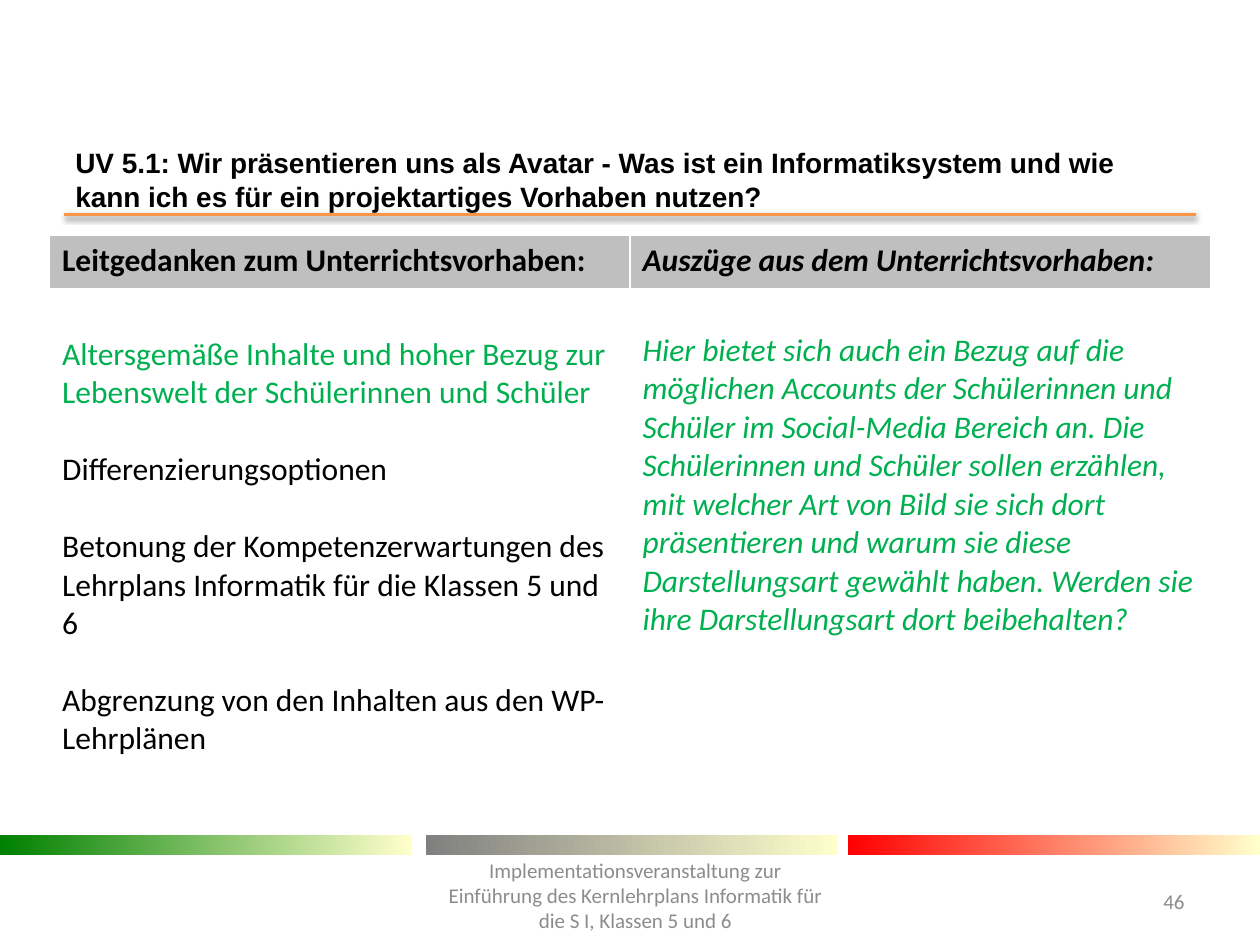
from dataclasses import dataclass

from lxml import etree
from pptx import Presentation
from pptx.dml.color import RGBColor
from pptx.enum.shapes import MSO_CONNECTOR, MSO_SHAPE
from pptx.enum.text import MSO_ANCHOR, PP_ALIGN
from pptx.oxml import parse_xml
from pptx.oxml.ns import nsdecls, qn
from pptx.util import Cm, Pt

STRAIGHT = MSO_CONNECTOR.STRAIGHT
RECTANGLE = MSO_SHAPE.RECTANGLE
MIDDLE = MSO_ANCHOR.MIDDLE
LEFT, CENTER, RIGHT = PP_ALIGN.LEFT, PP_ALIGN.CENTER, PP_ALIGN.RIGHT


@dataclass(frozen=True)
class Theme:
    heading_font: str = "Arial"
    body_font: str = "Calibri"
    title_size: int = 16
    body_size: int = 18
    footer_size: int = 12
    black: str = "000000"
    white: str = "FFFFFF"
    green: str = "00B050"
    footer: str = "8C8C8C"
    header: str = "BFBFBF"
    rule: str = "F79646"
    fade: str = "FFFFCC"


THEME = Theme()

TITLE = ("UV 5.1: Wir präsentieren uns als Avatar - Was ist ein Informatiksystem und wie "
         "kann ich es für ein projektartiges Vorhaben nutzen?")
FOOTER = ("Implementationsveranstaltung zur Einführung des Kernlehrplans Informatik für "
          "die S I, Klassen 5 und 6")
PAGE_NUMBER = "46"

BARS = [(0, "008000"), (8.59, "808080"), (17.09, "FF0000")]

COLUMNS = [
    {
        "heading": "Leitgedanken zum Unterrichtsvorhaben:",
        "italic": False,
        "body_top": 0.9,
        "body": [
            ("Altersgemäße Inhalte und hoher Bezug zur Lebenswelt der Schülerinnen und Schüler",
             THEME.green),
            ("Differenzierungsoptionen", THEME.black),
            ("Betonung der Kompetenzerwartungen des Lehrplans Informatik für die Klassen 5 und 6",
             THEME.black),
            ("Abgrenzung von den Inhalten aus den WP-Lehrplänen", THEME.black),
        ],
    },
    {
        "heading": "Auszüge aus dem Unterrichtsvorhaben:",
        "italic": True,
        "body_top": 0.82,
        "body": [
            ("Hier bietet sich auch ein Bezug auf die möglichen Accounts der Schülerinnen und "
             "Schüler im Social-Media Bereich an. Die Schülerinnen und Schüler sollen erzählen, "
             "mit welcher Art von Bild sie sich dort präsentieren und warum sie diese "
             "Darstellungsart gewählt haben. Werden sie ihre Darstellungsart dort beibehalten?",
             THEME.green),
        ],
    },
]
ROW_HEIGHTS = [1.12, 10.46]
COLUMN_WIDTH = 11.7
PARAGRAPH_GAP = 22


def add_span(para, text, size, color, font=THEME.body_font, bold=False, italic=False):
    span = para.add_run()
    span.text = text
    span.font.name = font
    span.font.size = Pt(size)
    span.font.bold = bold
    span.font.italic = italic
    span.font.color.rgb = RGBColor.from_string(color)


def add_text(page, area, text, align, size, color, **style):
    box = page.shapes.add_textbox(*map(Cm, area))
    frame = box.text_frame
    frame.word_wrap = True
    frame.vertical_anchor = MIDDLE
    para = frame.paragraphs[0]
    para.alignment = align
    add_span(para, text, size, color, **style)


def add_rule(page):
    rule = page.shapes.add_connector(STRAIGHT, Cm(1.3), Cm(4.32), Cm(24.1), Cm(4.32))
    rule.line.color.rgb = RGBColor.from_string(THEME.rule)
    rule.line.width = Pt(2)
    rule._element.spPr.append(parse_xml(
        f'<a:effectLst {nsdecls("a")}>'
        '<a:outerShdw blurRad="40000" dist="20000" dir="5400000" rotWithShape="0">'
        f'<a:srgbClr val="{THEME.black}"><a:alpha val="38000"/></a:srgbClr>'
        '</a:outerShdw></a:effectLst>'))


def add_bar(page, left, color):
    bar = page.shapes.add_shape(RECTANGLE, Cm(left), Cm(16.84), Cm(8.31), Cm(0.4))
    bar.shadow.inherit = False
    bar.line.fill.background()
    bar.fill.gradient()
    bar.fill.gradient_angle = 0
    for stop, shade in zip(bar.fill.gradient_stops, (color, THEME.fade)):
        stop.color.rgb = RGBColor.from_string(shade)


def set_borders(cell, bottom):
    properties = cell._tc.get_or_add_tcPr()
    for side, width in (("L", 1), ("R", 1), ("T", 1), ("B", bottom)):
        line = etree.SubElement(properties, qn(f"a:ln{side}"), w=str(Pt(width)))
        fill = etree.SubElement(line, qn("a:solidFill"))
        etree.SubElement(fill, qn("a:srgbClr"), val=THEME.white)


def add_columns(page):
    table = page.shapes.add_table(
        len(ROW_HEIGHTS), len(COLUMNS), Cm(1), Cm(4.74),
        Cm(COLUMN_WIDTH * len(COLUMNS)), Cm(sum(ROW_HEIGHTS))).table
    table.first_row = False
    table.horz_banding = False
    for row, height in zip(table.rows, ROW_HEIGHTS):
        row.height = Cm(height)
    for index, column in enumerate(COLUMNS):
        table.columns[index].width = Cm(COLUMN_WIDTH)
        heading, body = table.cell(0, index), table.cell(1, index)
        set_borders(heading, 3)
        heading.fill.solid()
        heading.fill.fore_color.rgb = RGBColor.from_string(THEME.header)
        add_span(heading.text_frame.paragraphs[0], column["heading"], THEME.body_size,
                 THEME.black, bold=True, italic=column["italic"])
        set_borders(body, 1)
        body.fill.background()
        body.margin_top = Cm(column["body_top"])
        frame = body.text_frame
        for position, (text, color) in enumerate(column["body"]):
            para = frame.add_paragraph() if position else frame.paragraphs[0]
            if position:
                para.space_before = Pt(PARAGRAPH_GAP)
            add_span(para, text, THEME.body_size, color, italic=column["italic"])


def main():
    deck = Presentation()
    deck.slide_width, deck.slide_height = Cm(25.4), Cm(19.05)
    page = deck.slides.add_slide(deck.slide_layouts[6])
    add_rule(page)
    for left, color in BARS:
        add_bar(page, left, color)
    add_text(page, (1.27, 3.12, 22.86, 1), TITLE, LEFT, THEME.title_size, THEME.black,
             font=THEME.heading_font, bold=True)
    add_text(page, (22.5, 17.65, 1.63, 1.02), PAGE_NUMBER, RIGHT, THEME.footer_size, THEME.footer)
    add_columns(page)
    add_text(page, (8.71, 17.32, 8.2, 1.45), FOOTER, CENTER, THEME.footer_size, THEME.footer)
    deck.save("out.pptx")


if __name__ == "__main__":
    main()
